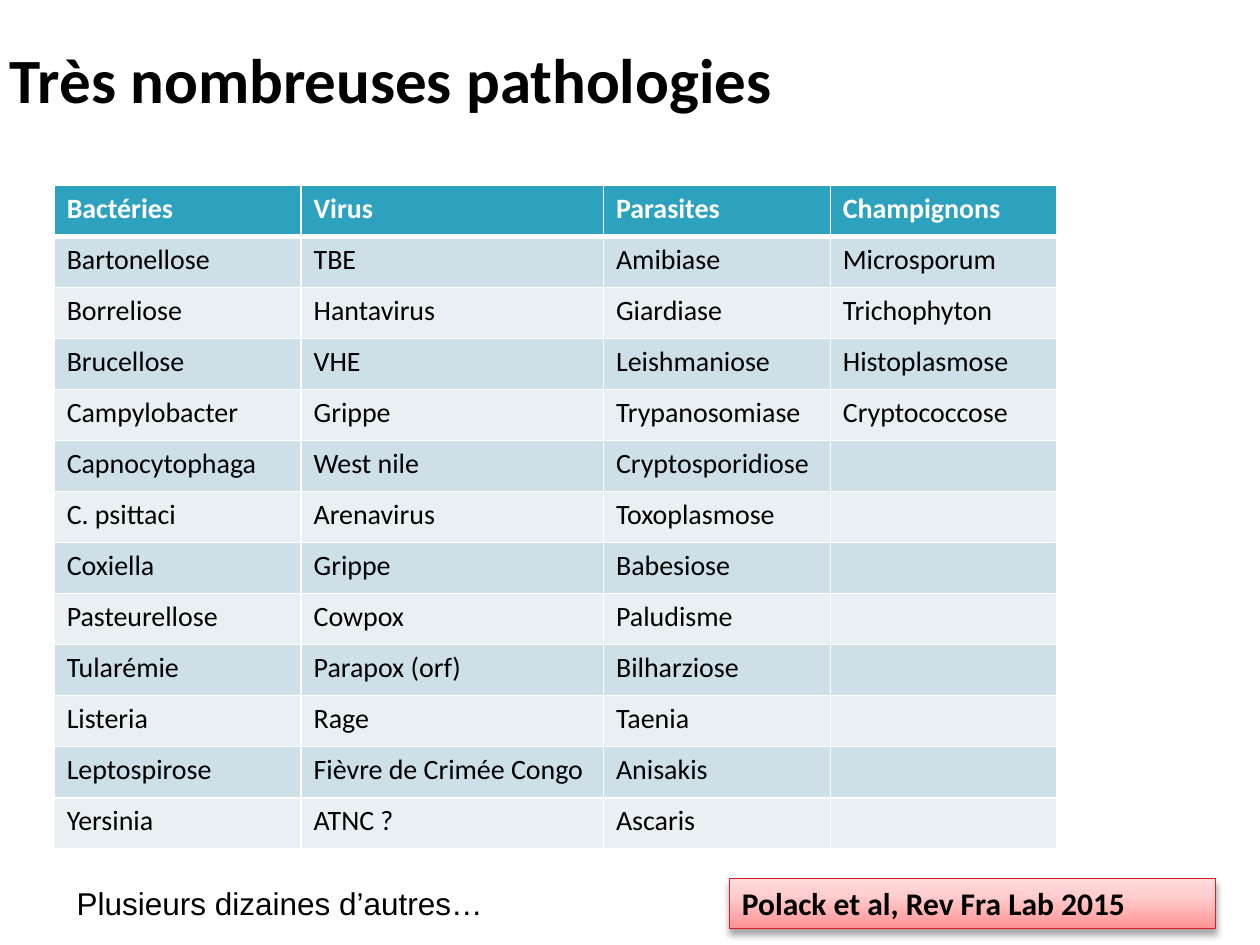
from dataclasses import dataclass
from itertools import zip_longest

from lxml.etree import SubElement
from pptx import Presentation
from pptx.dml.color import RGBColor
from pptx.enum.shapes import MSO_SHAPE
from pptx.enum.text import MSO_ANCHOR, PP_ALIGN
from pptx.oxml.ns import qn
from pptx.util import Inches, Pt

GRID_COLUMNS, GRID_ROWS = 1000, 750
SLIDE_WIDTH, SLIDE_HEIGHT = Inches(10), Inches(7.5)

COLORS = {
    "text": "000000",
    "white": "FFFFFF",
    "header": "2DA2BF",
    "odd_row": "CDE0E8",
    "even_row": "E8F0F4",
    "citation_line": "DA1F28",
    "shadow": "000000",
}
CITATION_STOPS = [(0, "FF9294"), (65, "FFCDCD"), (100, "FFDCDC")]

COLUMN_SPANS = [196, 240, 180, 180]
PATHOLOGIES = {
    "Bactéries": [
        "Bartonellose", "Borreliose", "Brucellose", "Campylobacter",
        "Capnocytophaga", "C. psittaci", "Coxiella", "Pasteurellose",
        "Tularémie", "Listeria", "Leptospirose", "Yersinia",
    ],
    "Virus": [
        "TBE", "Hantavirus", "VHE", "Grippe", "West nile", "Arenavirus",
        "Grippe", "Cowpox", "Parapox (orf)", "Rage",
        "Fièvre de Crimée Congo", "ATNC ?",
    ],
    "Parasites": [
        "Amibiase", "Giardiase", "Leishmaniose", "Trypanosomiase",
        "Cryptosporidiose", "Toxoplasmose", "Babesiose", "Paludisme",
        "Bilharziose", "Taenia", "Anisakis", "Ascaris",
    ],
    "Champignons": [
        "Microsporum", "Trichophyton", "Histoplasmose", "Cryptococcose",
    ],
}


@dataclass(frozen=True)
class Area:
    column: float
    row: float
    columns: float
    rows: float

    def emu(self) -> tuple:
        return (across(self.column), down(self.row),
                across(self.columns), down(self.rows))


@dataclass(frozen=True)
class Label:
    text: str
    area: Area
    size: int
    font: str = "Calibri"
    bold: bool = True
    anchor: MSO_ANCHOR = MSO_ANCHOR.TOP


TITLE = Label("Très nombreuses pathologies", Area(-2, 0, 1002, 125), 36,
              anchor=MSO_ANCHOR.MIDDLE)
CITATION = Label("Polack et al, Rev Fra Lab 2015", Area(579, 697, 386, 40), 18)
REMARK = Label("Plusieurs dizaines d’autres…", Area(51, 697, 425, 40), 18,
               font="Arial", bold=False)
TABLE_AREA = Area(43, 147, sum(COLUMN_SPANS), 527)


def across(columns: float) -> int:
    return round(SLIDE_WIDTH * columns / GRID_COLUMNS)


def down(rows: float) -> int:
    return round(SLIDE_HEIGHT * rows / GRID_ROWS)


def color(name: str) -> RGBColor:
    return RGBColor.from_string(COLORS[name])


def write(frame, text: str, size: int, font: str, bold: bool,
          color_name: str = "text") -> None:
    paragraph = frame.paragraphs[0]
    paragraph.text = text
    paragraph.alignment = PP_ALIGN.LEFT
    paragraph.font.size = Pt(size)
    paragraph.font.name = font
    paragraph.font.bold = bold
    paragraph.font.color.rgb = color(color_name)


def fill_label(shape, label: Label) -> None:
    frame = shape.text_frame
    frame.word_wrap = True
    frame.vertical_anchor = label.anchor
    write(frame, label.text, label.size, label.font, label.bold)


def draw_text(slide, label: Label) -> None:
    fill_label(slide.shapes.add_textbox(*label.area.emu()), label)


def draw_citation(slide, label: Label) -> None:
    citation = slide.shapes.add_shape(MSO_SHAPE.RECTANGLE, *label.area.emu())
    citation.line.color.rgb = color("citation_line")
    citation.line.width = Pt(0.75)
    citation.fill.gradient()
    citation.fill.gradient_angle = 90
    properties = citation._element.spPr
    stops = properties.find(qn("a:gradFill")).find(qn("a:gsLst"))
    for stop in list(stops):
        stops.remove(stop)
    for position, hex_color in CITATION_STOPS:
        stop = SubElement(stops, qn("a:gs"), pos=str(position * 1000))
        SubElement(stop, qn("a:srgbClr"), val=hex_color)
    citation.shadow.inherit = False
    shadow = SubElement(
        properties.find(qn("a:effectLst")), qn("a:outerShdw"),
        blurRad=str(Pt(4)), dist=str(Pt(3)), dir="5400000", rotWithShape="0")
    tint = SubElement(shadow, qn("a:srgbClr"), val=COLORS["shadow"])
    SubElement(tint, qn("a:alpha"), val="35000")
    fill_label(citation, label)


def add_borders(cell, row: int) -> None:
    widths = {"L": 1, "R": 1, "T": 3 if row == 1 else 1,
              "B": 3 if row == 0 else 1}
    properties = cell._tc.get_or_add_tcPr()
    for side, width in widths.items():
        border = SubElement(properties, qn(f"a:ln{side}"), w=str(Pt(width)))
        paint = SubElement(border, qn("a:solidFill"))
        SubElement(paint, qn("a:srgbClr"), val=COLORS["white"])


def draw_table(slide, pathologies: dict, area: Area) -> None:
    lines = [tuple(pathologies),
             *zip_longest(*pathologies.values(), fillvalue="")]
    table = slide.shapes.add_table(
        len(lines), len(pathologies), *area.emu()).table
    for column, span in zip(table.columns, COLUMN_SPANS):
        column.width = across(span)
    for row, line in enumerate(lines):
        table.rows[row].height = down(area.rows / len(lines))
        is_header = row == 0
        background = ("header" if is_header
                      else "odd_row" if row % 2 else "even_row")
        for column, text in enumerate(line):
            cell = table.cell(row, column)
            add_borders(cell, row)
            cell.fill.solid()
            cell.fill.fore_color.rgb = color(background)
            write(cell.text_frame, text, 16, "Calibri", is_header,
                  "white" if is_header else "text")


def main() -> None:
    presentation = Presentation()
    presentation.slide_width = SLIDE_WIDTH
    presentation.slide_height = SLIDE_HEIGHT
    slide = presentation.slides.add_slide(presentation.slide_layouts[6])
    draw_text(slide, TITLE)
    draw_table(slide, PATHOLOGIES, TABLE_AREA)
    draw_citation(slide, CITATION)
    draw_text(slide, REMARK)
    presentation.save("out.pptx")


if __name__ == "__main__":
    main()
